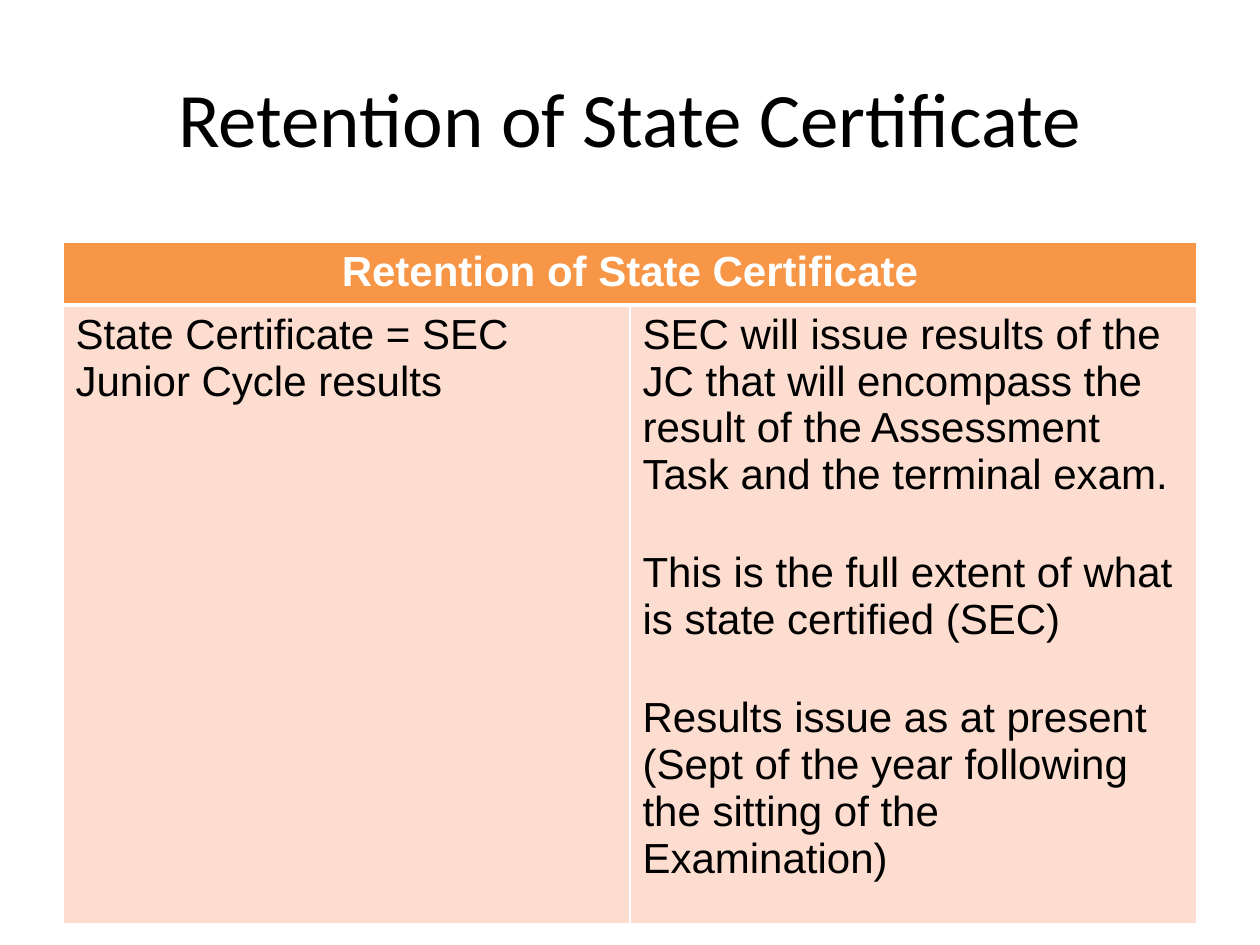
"""Build the slide on retention of the State Certificate."""
from lxml import etree
from pptx import Presentation
from pptx import util as u
from pptx.dml.color import RGBColor
from pptx.enum import text
from pptx.oxml import ns

BLACK = RGBColor(0x00, 0x00, 0x00)
WHITE = RGBColor(0xFF, 0xFF, 0xFF)
ORANGE = RGBColor(0xF7, 0x96, 0x46)
PEACH = RGBColor(0xFC, 0xDD, 0xCF)

HEADING = "Retention of State Certificate"
MEANING = ["State Certificate = SEC Junior Cycle results"]
DETAILS = [
    "SEC will issue results of the JC that will encompass the result of the Assessment Task and the terminal exam.",
    "This is the full extent of what is state certified (SEC)",
    "Results issue as at present (Sept of the year following the sitting of the Examination)",
]


def write(frame, lines, *, font="Arial", size=24, color=BLACK, bold=False, align=text.PP_ALIGN.LEFT, gap=29.3):
    frame.word_wrap = True
    for index, line in enumerate(lines):
        para = frame.paragraphs[0] if index == 0 else frame.add_paragraph()
        para.alignment = align
        if index:
            para.space_before = u.Pt(gap)
        span = para.add_run()
        span.text = line
        span.font.name = font
        span.font.size = u.Pt(size)
        span.font.bold = bold
        span.font.color.rgb = color


def add_borders(cell, widths):
    properties = cell._tc.get_or_add_tcPr()
    for index, (side, width) in enumerate(widths.items()):
        line = etree.Element(ns.qn(f"a:ln{side}"), w=str(u.Pt(width)))
        fill = etree.SubElement(line, ns.qn("a:solidFill"))
        etree.SubElement(fill, ns.qn("a:srgbClr"), val=str(WHITE))
        properties.insert(index, line)


deck = Presentation()
deck.slide_width, deck.slide_height = u.Pt(720), u.Pt(540)
page = deck.slides.add_slide(deck.slide_layouts[6])

title = page.shapes.add_textbox(u.Pt(36), u.Pt(21.6), u.Pt(648), u.Pt(90))
title.text_frame.vertical_anchor = text.MSO_ANCHOR.MIDDLE
write(title.text_frame, [HEADING], font="Calibri", size=44, align=text.PP_ALIGN.CENTER)

table = page.shapes.add_table(2, 2, u.Pt(36), u.Pt(138.2), u.Pt(648), u.Pt(367)).table
for row, height in zip(table.rows, (34, 333)):
    row.height = u.Pt(height)

header = table.cell(0, 0)
header.merge(table.cell(0, 1))
write(header.text_frame, [HEADING], color=WHITE, bold=True, align=text.PP_ALIGN.CENTER)
for cell, lines in zip(table.rows[1].cells, (MEANING, DETAILS)):
    write(cell.text_frame, lines)

for number, (row, color) in enumerate(zip(table.rows, (ORANGE, PEACH))):
    top, bottom = ((1, 3), (3, 1))[number]
    for cell in row.cells:
        cell.fill.solid()
        cell.fill.fore_color.rgb = color
        add_borders(cell, {"L": 1, "R": 1, "T": top, "B": bottom})

deck.save("out.pptx")
